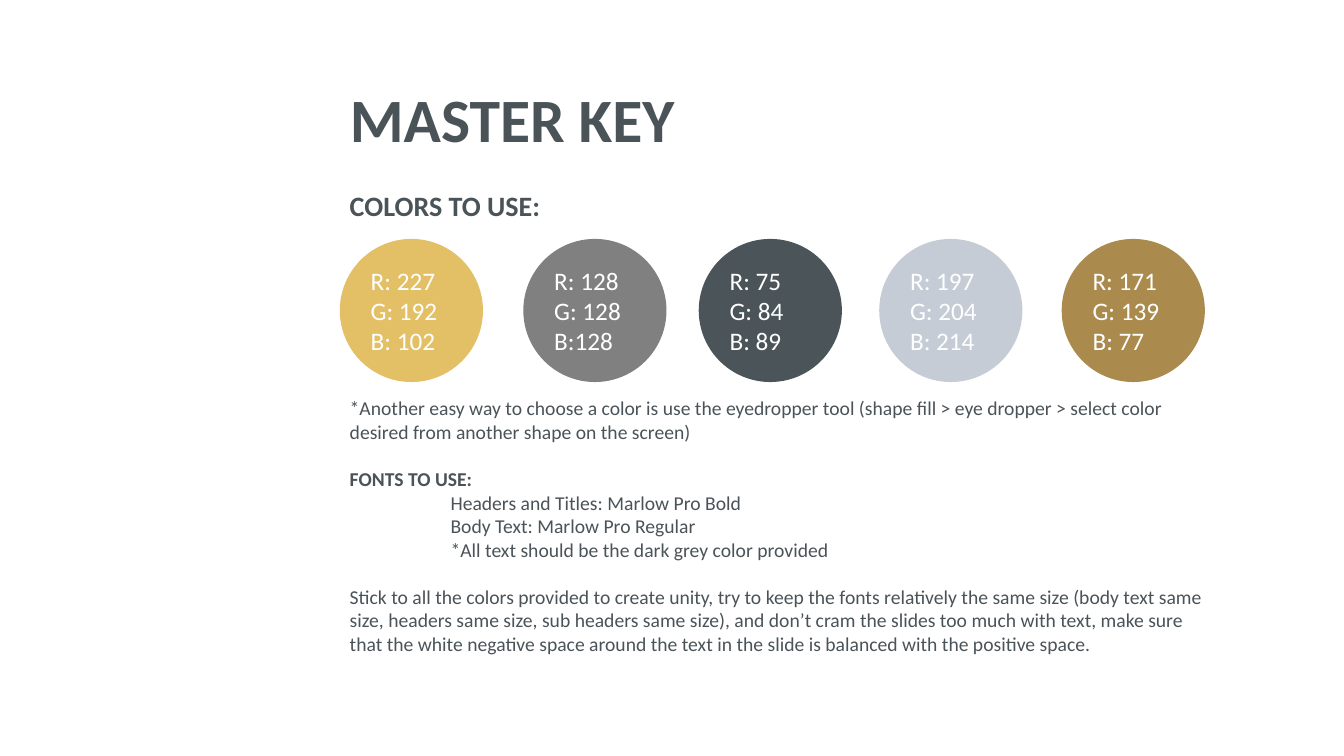
from pptx import Presentation
from pptx.dml.color import RGBColor
from pptx.enum.shapes import MSO_SHAPE
from pptx.enum.text import MSO_ANCHOR, MSO_AUTO_SIZE, PP_ALIGN
from pptx.util import Inches, Pt

GOLD = RGBColor(227, 192, 102)
GREY = RGBColor(128, 128, 128)
SLATE = RGBColor(75, 84, 89)
SILVER = RGBColor(197, 204, 214)
BRONZE = RGBColor(171, 139, 77)
INK = RGBColor(74, 83, 88)
WHITE = RGBColor(255, 255, 255)

LEFT = 3.37
SWATCH_TOP = 2.37
SWATCH_SIZE = 1.42

SWATCHES = [
    (3.37, GOLD, ["R: 227", "G: 192", "B: 102"]),
    (5.19, GREY, ["R: 128", "G: 128", "B:128"]),
    (6.93, SLATE, ["R: 75", "G: 84", "B: 89"]),
    (8.72, SILVER, ["R: 197", "G: 204", "B: 214"]),
    (10.53, BRONZE, ["R: 171", "G: 139", "B: 77"]),
]

EYEDROPPER_TIP = (
    "*Another easy way to choose a color is use the eyedropper tool "
    "(shape fill > eye dropper > select color desired from another shape on the screen)"
)
FONT_RULES = [
    "Headers and Titles: Marlow Pro Bold",
    "Body Text: Marlow Pro Regular",
    "*All text should be the dark grey color provided",
]
UNITY_ADVICE = (
    "Stick to all the colors provided to create unity, try to keep the fonts relatively "
    "the same size (body text same size, headers same size, sub headers same size), and "
    "don’t cram the slides too much with text, make sure that the white negative space "
    "around the text in the slide is balanced with the positive space."
)


class StyleGuidePage:
    def __init__(self, deck, font="Calibri"):
        self.page = deck.slides.add_slide(deck.slide_layouts[5])
        self.font = font

    def add_text(self, frame, text, size=14, color=INK, bold=False,
                 before=0, indent=0, line_spacing=None):
        """Fill the frame's empty first paragraph, or append a new one."""
        first = frame.paragraphs[0]
        para = first if not first.runs else frame.add_paragraph()
        para.alignment = PP_ALIGN.LEFT
        para.space_before = Pt(before)
        if line_spacing:
            para.line_spacing = line_spacing
        if indent:
            para._p.get_or_add_pPr().set("marL", str(Inches(indent)))
        span = para.add_run()
        span.text = text
        span.font.name = self.font
        span.font.size = Pt(size)
        span.font.bold = bold
        span.font.color.rgb = color

    def title(self, text, left, top, width, height):
        box = self.page.shapes.title
        box.left, box.top = Inches(left), Inches(top)
        box.width, box.height = Inches(width), Inches(height)
        frame = box.text_frame
        frame.word_wrap = True
        frame.auto_size = MSO_AUTO_SIZE.NONE
        frame.vertical_anchor = MSO_ANCHOR.TOP
        self.add_text(frame, text, size=44, bold=True, line_spacing=0.9)

    def text_box(self, left, top, width, height):
        box = self.page.shapes.add_textbox(
            Inches(left), Inches(top), Inches(width), Inches(height))
        box.text_frame.word_wrap = True
        return box.text_frame

    def swatch(self, left, color, lines):
        circle = self.page.shapes.add_shape(
            MSO_SHAPE.OVAL, Inches(left), Inches(SWATCH_TOP),
            Inches(SWATCH_SIZE), Inches(SWATCH_SIZE))
        circle.shadow.inherit = False
        circle.fill.solid()
        circle.fill.fore_color.rgb = color
        circle.line.fill.background()
        circle.text_frame.vertical_anchor = MSO_ANCHOR.MIDDLE
        for line in lines:
            self.add_text(circle.text_frame, line, size=18, color=WHITE)


def main():
    deck = Presentation()
    deck.slide_width, deck.slide_height = Inches(13.33), Inches(7.5)
    guide = StyleGuidePage(deck)

    guide.title("MASTER KEY", LEFT, 0.84, 7.71, 0.98)
    heading = guide.text_box(LEFT, 1.82, 4.35, 0.44)
    guide.add_text(heading, "COLORS TO USE:", size=20, bold=True)
    for left, color, lines in SWATCHES:
        guide.swatch(left, color, lines)

    advice = guide.text_box(LEFT, 3.88, 8.79, 3.16)
    guide.add_text(advice, EYEDROPPER_TIP)
    guide.add_text(advice, "FONTS TO USE:", bold=True, before=17)
    for rule in FONT_RULES:
        guide.add_text(advice, rule, indent=1)
    guide.add_text(advice, UNITY_ADVICE, before=17)

    deck.save("out.pptx")


if __name__ == "__main__":
    main()
